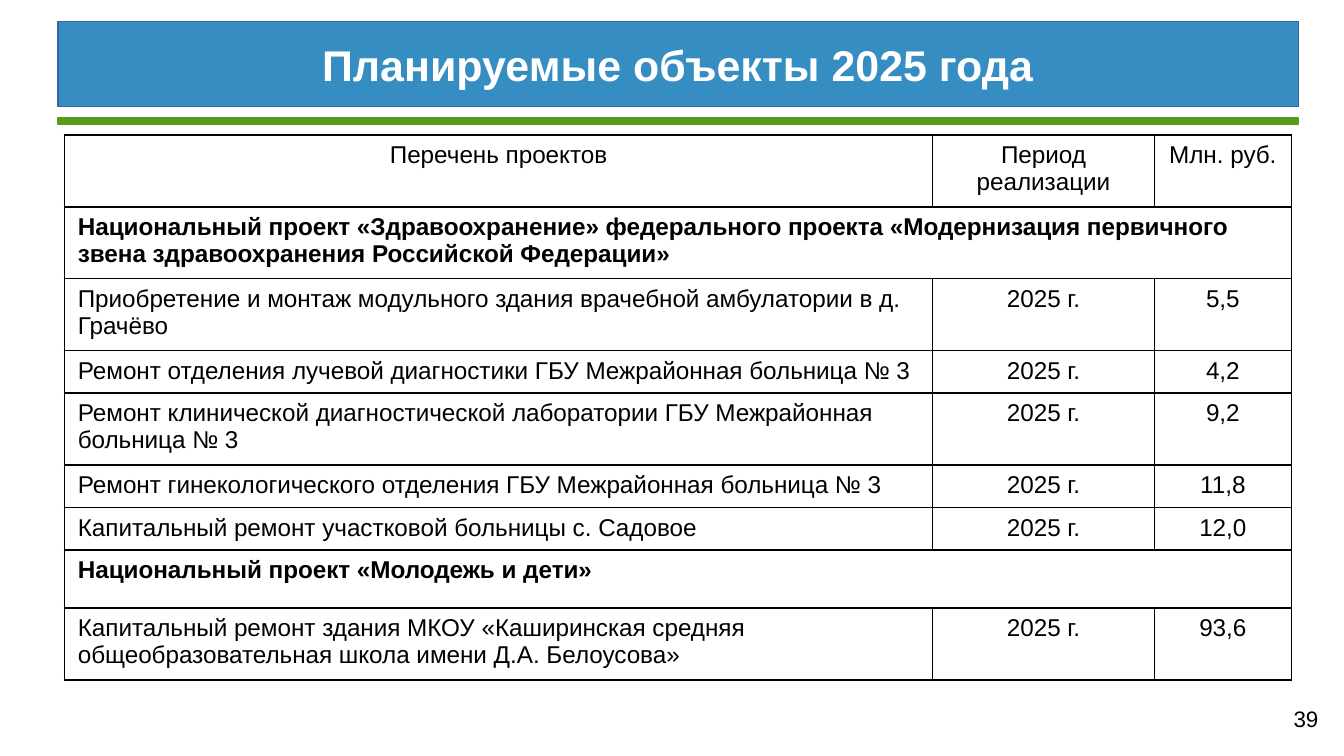
from dataclasses import dataclass

import lxml.etree
import pptx
import pptx.dml.color
import pptx.enum.shapes
import pptx.enum.text
import pptx.oxml.ns
import pptx.util

Pt = pptx.util.Pt
RGB = pptx.dml.color.RGBColor.from_string
ALIGN = pptx.enum.text.PP_ALIGN


@dataclass(frozen=True)
class Theme:
    font: str = "Arial"
    banner: str = "358DC1"
    banner_edge: str = "3465A4"
    accent: str = "579D1C"
    light: str = "FFFFFF"
    dark: str = "000000"
    title_size: float = 23
    table_size: float = 13
    number_size: float = 12
    edge_width: float = 0.75
    border_width: float = 0.96


@dataclass(frozen=True)
class Row:
    """A table row; one without period and cost is a heading across all columns."""
    name: str
    period: str = ""
    cost: str = ""
    height: float = 36.2
    centred: bool = False

    @property
    def is_section(self) -> bool:
        return not self.period


THEME = Theme()
SINGLE_LINE = 21.7
COLUMN_WIDTHS = (465.1, 118.8, 73.4)
YEAR = "2025 г."
ROWS = (
    Row("Перечень проектов", "Период реализации", "Млн. руб.", 38, centred=True),
    Row("Национальный проект «Здравоохранение» федерального проекта "
        "«Модернизация первичного звена здравоохранения Российской Федерации»"),
    Row("Приобретение и монтаж модульного здания врачебной амбулатории в д. Грачёво", YEAR, "5,5"),
    Row("Ремонт отделения лучевой диагностики ГБУ Межрайонная больница № 3",
        YEAR, "4,2", SINGLE_LINE),
    Row("Ремонт клинической диагностической лаборатории ГБУ Межрайонная больница № 3",
        YEAR, "9,2"),
    Row("Ремонт гинекологического отделения ГБУ Межрайонная больница № 3",
        YEAR, "11,8", SINGLE_LINE),
    Row("Капитальный ремонт участковой больницы с. Садовое", YEAR, "12,0", SINGLE_LINE),
    Row("Национальный проект «Молодежь и дети»", height=31),
    Row("Капитальный ремонт здания МКОУ «Каширинская средняя "
        "общеобразовательная школа имени Д.А. Белоусова»", YEAR, "93,6"),
)


def write(frame, text: str, size: float, color: str, align, bold: bool = False) -> None:
    paragraph = frame.paragraphs[0]
    paragraph.alignment = align
    run = paragraph.add_run()
    run.text = text
    run.font.name = THEME.font
    run.font.size = Pt(size)
    run.font.bold = bold
    run.font.color.rgb = RGB(color)


def place(shape, left: float, top: float, width: float, height: float) -> None:
    shape.left, shape.top, shape.width, shape.height = map(Pt, (left, top, width, height))


def paint(shape, fill: str, edge: str) -> None:
    shape.fill.solid()
    shape.fill.fore_color.rgb = RGB(fill)
    shape.line.color.rgb = RGB(edge)
    shape.line.width = Pt(THEME.edge_width)


def set_insets(frame, side: float, top: float, bottom: float) -> None:
    frame.margin_left = frame.margin_right = Pt(side)
    frame.margin_top, frame.margin_bottom = Pt(top), Pt(bottom)


def border_cell(cell) -> None:
    """Put the four border lines first in the cell properties, as the schema requires."""
    qn = pptx.oxml.ns.qn
    properties = cell._tc.get_or_add_tcPr()
    for position, side in enumerate(("lnL", "lnR", "lnT", "lnB")):
        line = lxml.etree.Element(qn(f"a:{side}"), w=str(Pt(THEME.border_width)))
        fill = lxml.etree.SubElement(line, qn("a:solidFill"))
        lxml.etree.SubElement(fill, qn("a:srgbClr"), val=THEME.dark)
        properties.insert(position, line)


def add_title(slide) -> None:
    title = slide.shapes.title
    place(title, 31, 11.5, 664.6, 45.4)
    paint(title, THEME.banner, THEME.banner_edge)
    frame = title.text_frame
    frame.auto_size = pptx.enum.text.MSO_AUTO_SIZE.NONE
    frame.word_wrap = True
    frame.vertical_anchor = pptx.enum.text.MSO_ANCHOR.MIDDLE
    set_insets(frame, 5, 3, 3)
    write(frame, "Планируемые объекты 2025 года", THEME.title_size, THEME.light,
          ALIGN.CENTER, bold=True)


def add_rule(slide) -> None:
    rule = slide.shapes.add_shape(pptx.enum.shapes.MSO_SHAPE.RECTANGLE,
                                  Pt(31), Pt(63.2), Pt(664.6), Pt(3.4))
    paint(rule, THEME.accent, THEME.accent)
    rule.shadow.inherit = False


def add_projects(slide) -> None:
    table = slide.shapes.add_table(
        len(ROWS), len(COLUMN_WIDTHS), Pt(34.5), Pt(72.3),
        Pt(sum(COLUMN_WIDTHS)), Pt(sum(row.height for row in ROWS))).table
    table.first_row = table.horz_banding = False
    for column, width in zip(table.columns, COLUMN_WIDTHS):
        column.width = Pt(width)
    for index, row in enumerate(ROWS):
        table.rows[index].height = Pt(row.height)
        cells = list(table.rows[index].cells)
        for cell in cells:
            cell.fill.background()
            border_cell(cell)
        if row.is_section:
            cells[0].merge(cells[-1])
        for column, text in enumerate((row.name, row.period, row.cost)):
            if text:
                align = ALIGN.CENTER if column or row.centred else ALIGN.LEFT
                write(cells[column].text_frame, text, THEME.table_size, THEME.dark,
                      align, bold=row.is_section)


def add_page_number(slide) -> None:
    frame = slide.shapes.add_textbox(Pt(672.5), Pt(374.4), Pt(39.6), Pt(20.9)).text_frame
    frame.word_wrap = True
    set_insets(frame, 5.8, 3.6, 2.9)
    write(frame, "39", THEME.number_size, THEME.dark, ALIGN.RIGHT)


def main() -> None:
    deck = pptx.Presentation()
    deck.slide_width, deck.slide_height = Pt(720), Pt(405)
    slide = deck.slides.add_slide(deck.slide_layouts.get_by_name("Title Only"))
    add_title(slide)
    add_page_number(slide)
    add_rule(slide)
    add_projects(slide)
    deck.save("out.pptx")


if __name__ == "__main__":
    main()
